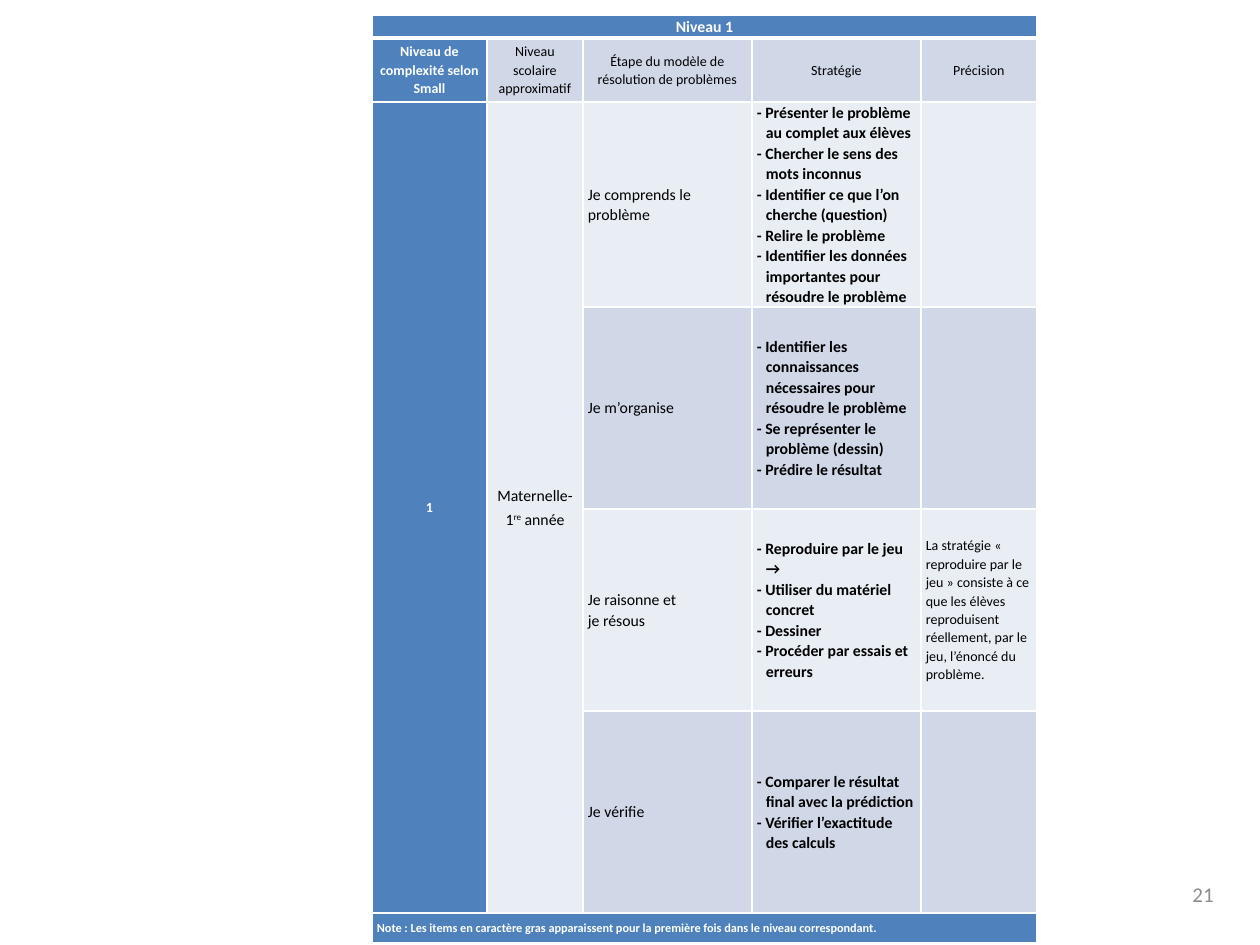
from lxml import etree
from pptx import Presentation
from pptx.dml.color import RGBColor
from pptx.enum.text import MSO_ANCHOR, PP_ALIGN
from pptx.oxml.ns import qn
from pptx.util import Emu, Pt

LEFT, MID, RIGHT = PP_ALIGN.LEFT, PP_ALIGN.CENTER, PP_ALIGN.RIGHT
CENTRE = MSO_ANCHOR.MIDDLE
WHITE = RGBColor(0xFF, 0xFF, 0xFF)
BLACK = RGBColor(0, 0, 0)
GREY = RGBColor(0x8C, 0x8C, 0x8C)
BLUE = RGBColor(0x4F, 0x81, 0xBD)
PALE = RGBColor(0xD0, 0xD8, 0xE8)
LIGHT = RGBColor(0xE9, 0xED, 0xF4)

COLS = [115, 96, 169, 169, 116]
ROWS = [23, 64, 202, 202, 202, 202, 30]
HEADS = [
    "Niveau de complexité selon Small",
    "Niveau scolaire approximatif",
    "Étape du modèle de résolution de problèmes",
    "Stratégie",
    "Précision",
]
STEPS = [
    (["Je comprends le problème"], [
        "Présenter le problème au complet aux élèves",
        "Chercher le sens des mots inconnus",
        "Identifier ce que l’on cherche (question)",
        "Relire le problème",
        "Identifier les données importantes pour résoudre le problème",
    ], []),
    (["Je m’organise"], [
        "Identifier les connaissances nécessaires pour résoudre le problème",
        "Se représenter le problème (dessin)",
        "Prédire le résultat",
    ], []),
    (["Je raisonne et", "je résous"], [
        "Reproduire par le jeu\n→",
        "Utiliser du matériel concret",
        "Dessiner",
        "Procéder par essais et erreurs",
    ], ["La stratégie « reproduire par le jeu » consiste à ce que les élèves "
        "reproduisent réellement, par le jeu, l’énoncé du problème."]),
    (["Je vérifie"], [
        "Comparer le résultat final avec la prédiction",
        "Vérifier l’exactitude des calculs",
    ], []),
]
NOTE = ("Note : Les items en caractère gras apparaissent pour la première fois "
        "dans le niveau correspondant.")


def px(n):
    return Emu(round(n * 914400 / 126))


class Deck:
    """Holds the style and the current slide."""

    face = "Calibri"

    def __init__(self, wide, high):
        self.prs = Presentation()
        self.prs.slide_width, self.prs.slide_height = px(wide), px(high)
        self.slide = self.prs.slides.add_slide(self.prs.slide_layouts[6])

    def style(self, para, size, color, bold=False, align=LEFT):
        para.alignment = align
        font = para.font
        font.name, font.size, font.bold = self.face, Pt(size), bold
        font.color.rgb = color

    def label(self, x, y, w, h, text, size, color, align):
        frame = self.slide.shapes.add_textbox(px(x), px(y), px(w), px(h)).text_frame
        frame.word_wrap, frame.vertical_anchor = True, CENTRE
        frame.text = text
        self.style(frame.paragraphs[0], size, color, align=align)

    def table(self, x, y, cols, rows):
        grid = self.slide.shapes.add_table(
            len(rows), len(cols), px(x), px(y), px(sum(cols)), px(sum(rows))).table
        grid.first_row = grid.horz_banding = False
        for col, w in zip(grid.columns, cols):
            col.width = px(w)
        for row, h in zip(grid.rows, rows):
            row.height = px(h)
        for r in range(len(rows)):
            for c in range(len(cols)):
                thick = {"lnT": 3 if r == 1 else 1, "lnB": 3 if r == 0 else 1}
                self.border(grid.cell(r, c), thick)
        return grid

    def border(self, cell, thick):
        props = cell._tc.get_or_add_tcPr()
        for side in ("lnL", "lnR", "lnT", "lnB"):
            line = etree.SubElement(props, qn("a:" + side), w=str(Pt(thick.get(side, 1))))
            fill = etree.SubElement(line, qn("a:solidFill"))
            etree.SubElement(fill, qn("a:srgbClr"), val=str(WHITE))

    def cell(self, cell, fill, lines, size, color=BLACK, bold=False,
             align=LEFT, hang=0, gap=0):
        cell.fill.solid()
        cell.fill.fore_color.rgb = fill
        cell.vertical_anchor = CENTRE
        cell.margin_left = cell.margin_right = px(5)
        cell.margin_top = cell.margin_bottom = 0
        frame = cell.text_frame
        for i, text in enumerate(lines):
            para = frame.add_paragraph() if i else frame.paragraphs[0]
            if hang:
                props = para._p.get_or_add_pPr()
                props.set("marL", str(px(hang)))
                props.set("indent", str(-px(hang)))
            para.line_spacing = 1.07
            if i and gap:
                para.space_before = Pt(gap)
            self.style(para, size, color, bold, align)
            for k, part in enumerate(text.split("^")):
                for j, piece in enumerate(part.split("\n")):
                    if j:
                        para.add_line_break()
                    run = para.add_run()
                    run.text = piece
                    if k % 2:
                        run.font._element.set("baseline", "30000")


def main():
    deck = Deck(1260, 945)
    grid = deck.table(372, 15, COLS, ROWS)
    last = len(ROWS) - 1
    for top, left, end, right in [(0, 0, 0, 4), (2, 0, 5, 0), (2, 1, 5, 1), (last, 0, last, 4)]:
        grid.cell(top, left).merge(grid.cell(end, right))

    deck.cell(grid.cell(0, 0), BLUE, ["Niveau 1"], 9, WHITE, True, MID)
    for c, head in enumerate(HEADS):
        fill, color = (PALE, BLACK) if c else (BLUE, WHITE)
        deck.cell(grid.cell(1, c), fill, [head], 8, color, not c, MID)
    deck.cell(grid.cell(2, 0), BLUE, ["1"], 8, WHITE, True, MID)
    deck.cell(grid.cell(2, 1), LIGHT, ["Maternelle-", "1^re^ année"], 9, align=MID, gap=2)
    for r, (step, plans, hint) in enumerate(STEPS, 2):
        fill = PALE if r % 2 else LIGHT
        deck.cell(grid.cell(r, 2), fill, step, 9)
        deck.cell(grid.cell(r, 3), fill, ["- " + plan for plan in plans], 9, bold=True, hang=9)
        deck.cell(grid.cell(r, 4), fill, hint, 8)
    deck.cell(grid.cell(last, 0), BLUE, [NOTE], 7, WHITE, True)

    deck.label(1145, 869, 81, 50, "21", 12, GREY, RIGHT)
    deck.prs.save("out.pptx")


if __name__ == "__main__":
    main()
